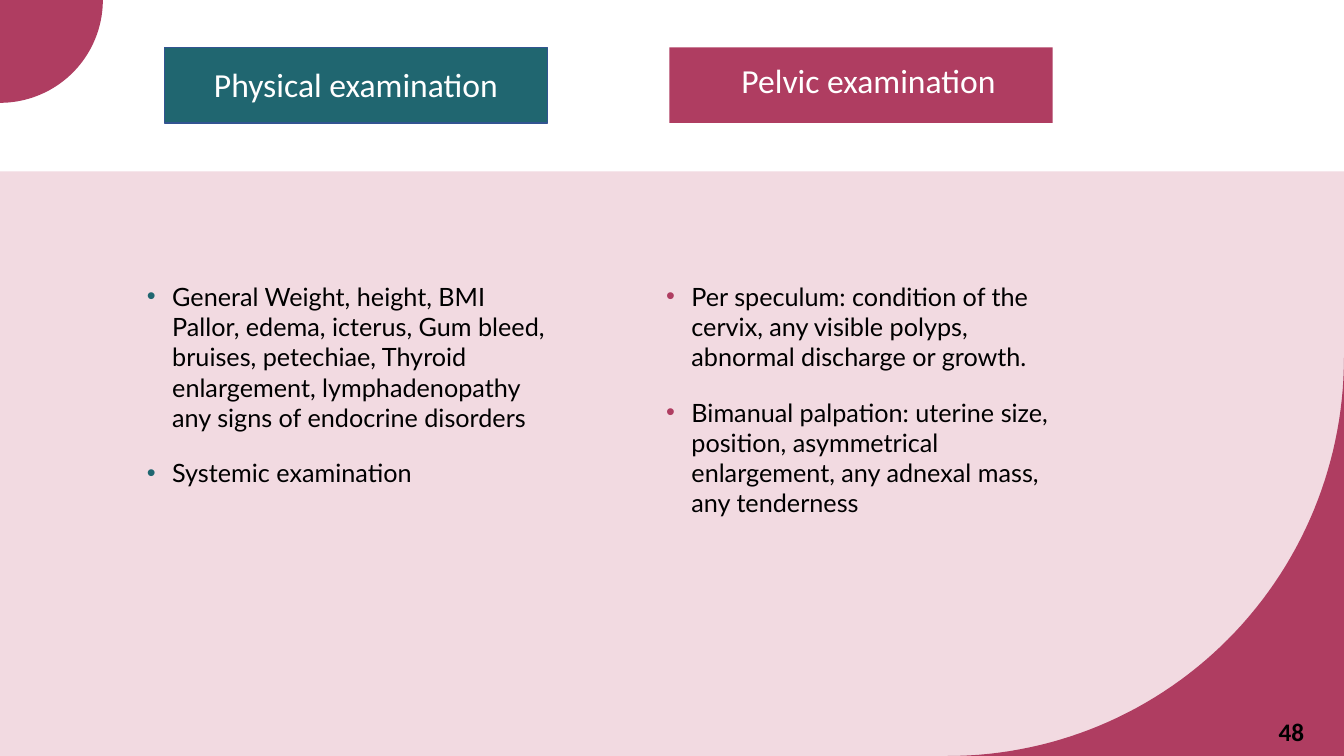
from dataclasses import dataclass
from math import cos, pi, sin

from lxml import etree
from pptx import Presentation
from pptx.dml.color import RGBColor
from pptx.enum.shapes import MSO_SHAPE
from pptx.enum.text import MSO_ANCHOR, PP_ALIGN
from pptx.oxml.ns import qn
from pptx.util import Inches, Pt

RECTANGLE = MSO_SHAPE.RECTANGLE
TOP = MSO_ANCHOR.TOP
CENTER = PP_ALIGN.CENTER


@dataclass(frozen=True)
class Theme:
    rose: str = "AF3D61"
    blush: str = "F2DAE1"
    teal: str = "206670"
    outline: str = "325491"
    white: str = "FFFFFF"
    black: str = "000000"
    heading_font: str = "Calibri"
    body_font: str = "Lato"
    heading_size: int = 24
    body_size: int = 18


theme = Theme()

deck = Presentation()
deck.slide_width, deck.slide_height = Inches(13.33), Inches(7.5)
page = deck.slides.add_slide(deck.slide_layouts[6])


def paint(shape, fill, line=None):
    shape.shadow.inherit = False
    shape.fill.solid()
    shape.fill.fore_color.rgb = RGBColor.from_string(fill)
    if line:
        shape.line.color.rgb = RGBColor.from_string(line)
        shape.line.width = Pt(1)
    else:
        shape.line.fill.background()


def add_text(left, top, width, height, paragraphs, font, size, color, bold=False, bullet=None):
    box = page.shapes.add_textbox(Inches(left), Inches(top), Inches(width), Inches(height))
    frame = box.text_frame
    frame.word_wrap = True
    frame.vertical_anchor = TOP
    for number, lines in enumerate(paragraphs):
        para = frame.paragraphs[0] if number == 0 else frame.add_paragraph()
        if bullet:
            para.space_after = Pt(18)
            properties = para._p.get_or_add_pPr()
            properties.set("marL", str(Inches(0.25)))
            properties.set("indent", str(-Inches(0.25)))
            bullet_color = etree.SubElement(properties, qn("a:buClr"))
            etree.SubElement(bullet_color, qn("a:srgbClr"), val=bullet)
            etree.SubElement(properties, qn("a:buFont"), typeface="Arial")
            etree.SubElement(properties, qn("a:buChar"), char="•")
        else:
            para.alignment = CENTER
            para.line_spacing = 0.9
        for index, line in enumerate(lines):
            if index:
                para.add_line_break()
            span = para.add_run()
            span.text = line
            span.font.name = font
            span.font.size = Pt(size)
            span.font.bold = bold
            span.font.color.rgb = RGBColor.from_string(color)
        para.font.size = Pt(size)


# Background panel
panel = page.shapes.add_shape(RECTANGLE, 0, Inches(1.7), Inches(13.33), Inches(5.8))
paint(panel, theme.blush)

# Rounded corners: corner point, arc center, arc radii
corners = [
    (13.33, 7.5, 9.4, 3.55, 3.93, 3.95),
    (0, 0, 0, 0, 1.02, 1.02),
]
steps = 60
for corner_x, corner_y, center_x, center_y, radius_x, radius_y in corners:
    arc = []
    for step in range(steps + 1):
        angle = pi / 2 * step / steps
        arc.append((Inches(center_x + radius_x * cos(angle)),
                    Inches(center_y + radius_y * sin(angle))))
    builder = page.shapes.build_freeform(Inches(corner_x), Inches(corner_y))
    builder.add_line_segments(arc, close=True)
    paint(builder.convert_to_shape(), theme.rose)

# Two columns: heading bar, heading and bullet list
columns = [
    {
        "bar_left": 1.63, "fill": theme.teal, "line": theme.outline,
        "heading": "Physical examination", "heading_at": (1.58, 0.63, 3.9, 0.53),
        "list_at": (1.36, 2.74, 4.34, 2.54),
        "items": [
            ["General Weight, height, BMI",
             "Pallor, edema, icterus, Gum bleed, bruises, petechiae, "
             "Thyroid enlargement, lymphadenopathy",
             "any signs of endocrine disorders"],
            ["Systemic examination"],
        ],
    },
    {
        "bar_left": 6.64, "fill": theme.rose, "line": None,
        "heading": "Pelvic examination", "heading_at": (6.78, 0.59, 3.67, 0.53),
        "list_at": (6.51, 2.74, 4.07, 2.54),
        "items": [
            ["Per speculum: condition of the cervix, any visible polyps, "
             "abnormal discharge or growth."],
            ["Bimanual palpation: uterine size, position, asymmetrical "
             "enlargement, any adnexal mass, any tenderness"],
        ],
    },
]
for column in columns:
    bar = page.shapes.add_shape(
        RECTANGLE, Inches(column["bar_left"]), Inches(0.47), Inches(3.8), Inches(0.75))
    paint(bar, column["fill"], column["line"])
    add_text(*column["heading_at"], [[column["heading"]]],
             theme.heading_font, theme.heading_size, theme.white)
    add_text(*column["list_at"], column["items"],
             theme.body_font, theme.body_size, theme.black, bullet=column["fill"])

# Page number
add_text(12.06, 7.09, 1.5, 0.59, [["48"]],
         theme.heading_font, theme.body_size, theme.black, bold=True)

deck.save("out.pptx")
